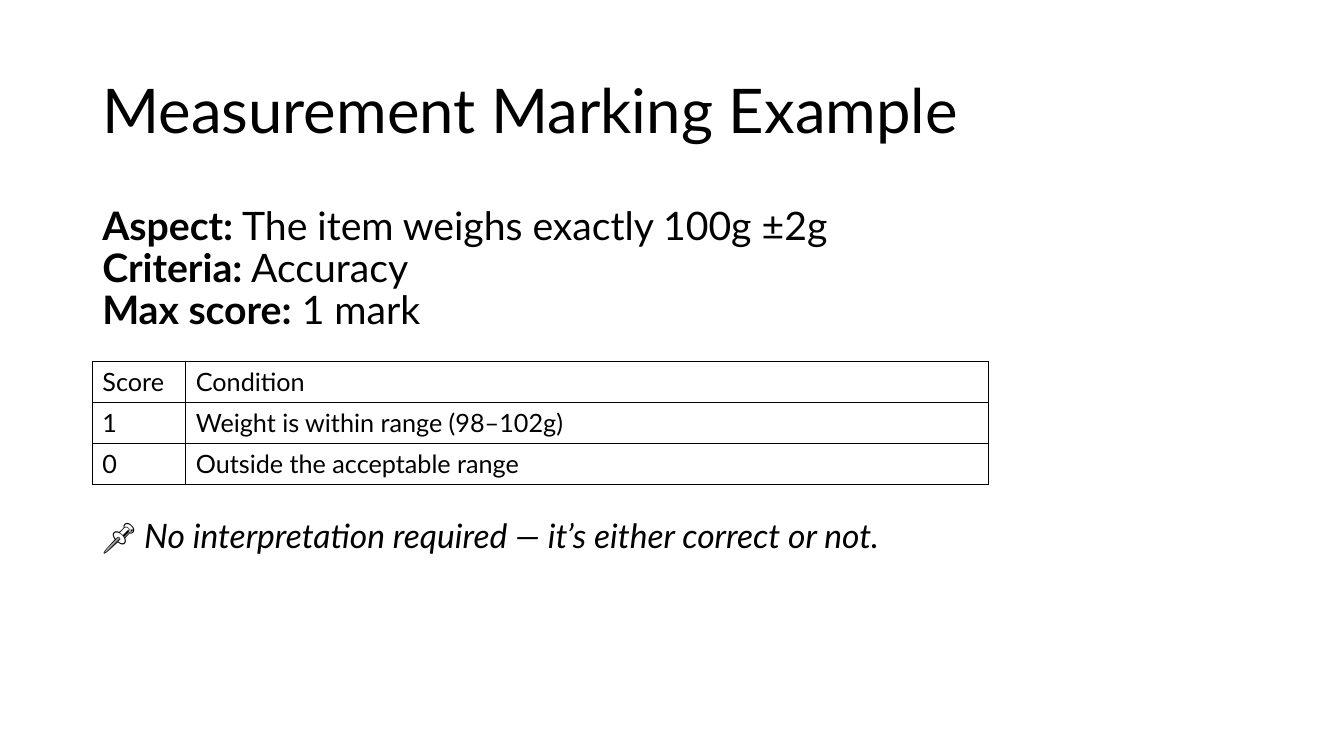
import dataclasses

import lxml.etree
import pptx
import pptx.dml.color
import pptx.enum.text
import pptx.oxml.ns
import pptx.util

Pt = pptx.util.Pt
Anchor = pptx.enum.text.MSO_ANCHOR


@dataclasses.dataclass(frozen=True)
class Theme:
    font: str = "Lato"
    ink: str = "000000"
    title: int = 44
    body: int = 28
    note: int = 24
    cell: int = 18
    border: int = 1


def write(paragraph, text, *, theme, size, bold=False, italic=False):
    run = paragraph.add_run()
    run.text = text
    font = run.font
    font.name = theme.font
    font.size = Pt(size)
    font.bold = bold
    font.italic = italic
    font.color.rgb = pptx.dml.color.RGBColor.from_string(theme.ink)


class MarkingSlide:
    """Holds the theme and the slide being filled."""

    def __init__(self, slide, theme):
        self.slide = slide
        self.theme = theme

    def text(self, left, top, width, height, lines, size, *,
             anchor=Anchor.TOP, spacing=1.0, before=0, grow=False):
        """Each line is a list of (text, format) pairs."""
        box = self.slide.shapes.add_textbox(Pt(left), Pt(top), Pt(width), Pt(height))
        frame = box.text_frame
        frame.word_wrap = True
        frame.vertical_anchor = anchor
        if grow:
            frame.auto_size = pptx.enum.text.MSO_AUTO_SIZE.SHAPE_TO_FIT_TEXT
        paragraph = frame.paragraphs[0]
        paragraph.line_spacing = spacing
        paragraph.space_before = Pt(before)
        for number, line in enumerate(lines):
            if number:
                paragraph.add_line_break()
            for words, style in line:
                write(paragraph, words, theme=self.theme, size=size, **style)

    def table(self, left, top, widths, row_height, rows):
        table = self.slide.shapes.add_table(
            len(rows), len(widths), Pt(left), Pt(top),
            Pt(sum(widths)), Pt(row_height * len(rows))).table
        table.first_row = table.horz_banding = False
        for column, width in zip(table.columns, widths):
            column.width = Pt(width)
        for r, row in enumerate(rows):
            table.rows[r].height = Pt(row_height)
            for c, words in enumerate(row):
                cell = table.cell(r, c)
                cell.fill.background()
                self.outline(cell)
                write(cell.text_frame.paragraphs[0], words,
                      theme=self.theme, size=self.theme.cell)

    def outline(self, cell):
        qn = pptx.oxml.ns.qn
        properties = cell._tc.get_or_add_tcPr()
        for position, side in enumerate(("a:lnL", "a:lnR", "a:lnT", "a:lnB")):
            line = lxml.etree.Element(qn(side), w=str(Pt(self.theme.border)))
            fill = lxml.etree.SubElement(line, qn("a:solidFill"))
            lxml.etree.SubElement(fill, qn("a:srgbClr"), val=self.theme.ink)
            properties.insert(position, line)


def main():
    deck = pptx.Presentation()
    deck.slide_width, deck.slide_height = Pt(960), Pt(540)
    theme = Theme()
    page = MarkingSlide(deck.slides.add_slide(deck.slide_layouts[6]), theme)
    left, width = 66, 828

    # Title
    page.text(left, 28.75, width, 104.4, [[("Measurement Marking Example", {})]],
              theme.title, anchor=Anchor.MIDDLE, spacing=0.9)

    # Aspect being marked
    facts = [
        ("Aspect:", "The item weighs exactly 100g ±2g"),
        ("Criteria:", "Accuracy"),
        ("Max score:", "1 mark"),
    ]
    page.text(left, 143.75, width, 104.4,
              [[(label, {"bold": True}), (" " + value, {})] for label, value in facts],
              theme.body, spacing=0.9, before=10)

    # Score table
    page.table(left, 258.5, [66.75, 573.25], 29.2, [
        ("Score", "Condition"),
        ("1", "Weight is within range (98–102g)"),
        ("0", "Outside the acceptable range"),
    ])

    # Closing note
    page.text(left, 364.5, 710.5, 36.35, [[
        ("📌 ", {}),
        ("No interpretation required — it’s either correct or not.", {"italic": True}),
    ]], theme.note, grow=True)

    deck.save("out.pptx")


if __name__ == "__main__":
    main()
